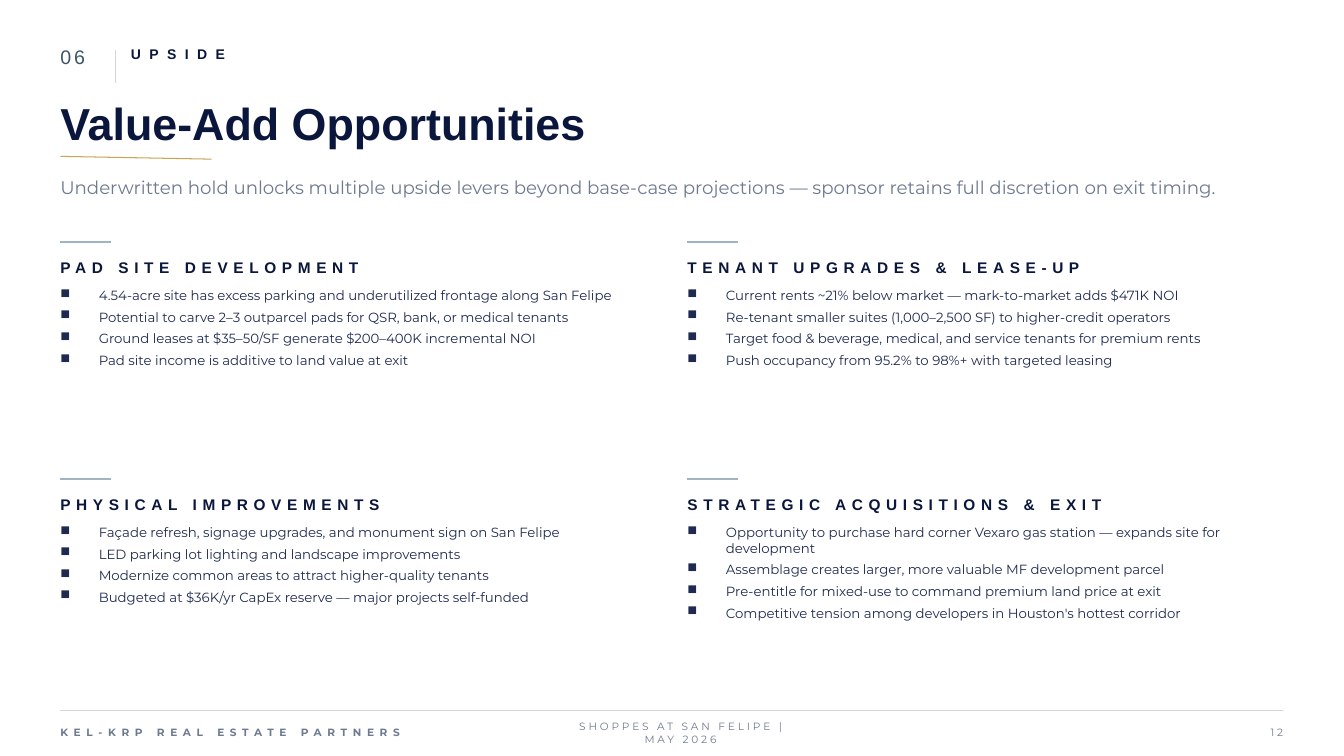
from dataclasses import dataclass
from itertools import product

from lxml.etree import SubElement
from pptx import Presentation
from pptx.dml.color import RGBColor
from pptx.enum.shapes import MSO_CONNECTOR
from pptx.enum.text import MSO_ANCHOR, PP_ALIGN
from pptx.oxml.ns import qn
from pptx.slide import Slide
from pptx.util import Cm, Pt

NAVY = "0B163C"
INK = "1E2A50"
SLATE = "3E5668"
GREY = "6E7A90"
RULE = "D4D6DC"
STEEL = "A0B4C3"
GOLD = "C9A557"

LEFT = 1.52
RIGHT = 32.33
COLUMNS = (LEFT, 17.32)
ROWS = (6.1, 12.07)
WIDTH = 15.04
INDENT = 0.97


@dataclass
class Lever:
    title: str
    points: list[str]


LEVERS = [
    Lever("PAD SITE DEVELOPMENT", [
        "4.54-acre site has excess parking and underutilized frontage along San Felipe",
        "Potential to carve 2–3 outparcel pads for QSR, bank, or medical tenants",
        "Ground leases at $35–50/SF generate $200–400K incremental NOI",
        "Pad site income is additive to land value at exit",
    ]),
    Lever("TENANT UPGRADES & LEASE-UP", [
        "Current rents ~21% below market — mark-to-market adds $471K NOI",
        "Re-tenant smaller suites (1,000–2,500 SF) to higher-credit operators",
        "Target food & beverage, medical, and service tenants for premium rents",
        "Push occupancy from 95.2% to 98%+ with targeted leasing",
    ]),
    Lever("PHYSICAL IMPROVEMENTS", [
        "Façade refresh, signage upgrades, and monument sign on San Felipe",
        "LED parking lot lighting and landscape improvements",
        "Modernize common areas to attract higher-quality tenants",
        "Budgeted at $36K/yr CapEx reserve — major projects self-funded",
    ]),
    Lever("STRATEGIC ACQUISITIONS & EXIT", [
        "Opportunity to purchase hard corner Vexaro gas station — expands site for development",
        "Assemblage creates larger, more valuable MF development parcel",
        "Pre-entitle for mixed-use to command premium land price at exit",
        "Competitive tension among developers in Houston's hottest corridor",
    ]),
]


def color(code: str) -> RGBColor:
    return RGBColor.from_string(code)


def write(slide: Slide, lines: list[str], left: float, top: float, width: float,
          height: float, *, size: float, fill: str = GREY, face: str = "Montserrat",
          bold: bool = False, track: int = 0, align: PP_ALIGN = PP_ALIGN.LEFT,
          anchor: MSO_ANCHOR = MSO_ANCHOR.TOP, bullet: str = "", after: float = 0) -> None:
    frame = slide.shapes.add_textbox(Cm(left), Cm(top), Cm(width), Cm(height)).text_frame
    frame.word_wrap = True
    frame.vertical_anchor = anchor
    frame.margin_left = frame.margin_right = frame.margin_top = frame.margin_bottom = 0
    for index, line in enumerate(lines):
        para = frame.add_paragraph() if index else frame.paragraphs[0]
        para.alignment = align
        para.space_after = Pt(after)
        if bullet:
            props = para._p.get_or_add_pPr()
            props.set("marL", str(Cm(INDENT)))
            props.set("indent", str(-Cm(INDENT)))
            SubElement(props, qn("a:buChar")).set("char", bullet)
        run = para.add_run()
        run.text = line
        run.font.name = face
        run.font.size = Pt(size)
        run.font.bold = bold
        run.font.color.rgb = color(fill)
        if track:
            run._r.get_or_add_rPr().set("spc", str(track * 100))


def rule(slide: Slide, start: tuple[float, float], end: tuple[float, float],
         fill: str, weight: float) -> None:
    line = slide.shapes.add_connector(
        MSO_CONNECTOR.STRAIGHT, *(Cm(value) for value in (*start, *end)))
    line.line.color.rgb = color(fill)
    line.line.width = Pt(weight)
    SubElement(line._element.spPr, qn("a:effectLst"))


def header(slide: Slide) -> None:
    write(slide, ["06"], LEFT, 1.14, 1.78, 1.14, size=14, fill=SLATE, face="Arial", track=2)
    rule(slide, (2.92, 1.27), (2.92, 2.08), RULE, 0.6)
    write(slide, ["UPSIDE"], 3.3, 1.14, 17.78, 1.02, size=10, fill=NAVY,
          face="Arial", bold=True, track=6)
    write(slide, ["Value-Add Opportunities"], LEFT, 2.41, RIGHT - LEFT, 2.16,
          size=32, fill=NAVY, face="Arial", bold=True)
    rule(slide, (LEFT, 3.94), (5.33, 4.01), GOLD, 0.75)
    write(slide, ["Underwritten hold unlocks multiple upside levers beyond base-case "
                  "projections — sponsor retains full discretion on exit timing."],
          LEFT, 4.45, RIGHT - LEFT, 1.02, size=13)


def panel(slide: Slide, lever: Lever, left: float, top: float) -> None:
    rule(slide, (left, top), (left + 1.27, top), STEEL, 1.5)
    write(slide, [lever.title], left, top + 0.25, WIDTH, 0.76, size=11, fill=NAVY,
          face="Arial", bold=True, track=4, anchor=MSO_ANCHOR.MIDDLE)
    write(slide, lever.points, left, top + 1.14, WIDTH, 3.94, size=9.5, fill=INK,
          bullet="■", after=4)


def footer(slide: Slide) -> None:
    top, height = 18.08, 0.76
    rule(slide, (LEFT, 17.91), (RIGHT, 17.91), RULE, 0.5)
    write(slide, ["KEL-KRP REAL ESTATE PARTNERS"], LEFT, top, 12.7, height, size=7.5,
          bold=True, track=4, anchor=MSO_ANCHOR.MIDDLE)
    write(slide, ["SHOPPES AT SAN FELIPE |", "MAY 2026"], 13.97, top, 6.35, height, size=7.5,
          track=2, align=PP_ALIGN.CENTER, anchor=MSO_ANCHOR.MIDDLE)
    write(slide, ["12"], RIGHT - 2.54, top, 2.54, height, size=7.5, track=2,
          align=PP_ALIGN.RIGHT, anchor=MSO_ANCHOR.MIDDLE)


def main() -> None:
    deck = Presentation()
    deck.slide_width = Cm(33.86)
    deck.slide_height = Cm(19.05)
    slide = deck.slides.add_slide(deck.slide_layouts[6])
    header(slide)
    for lever, (top, left) in zip(LEVERS, product(ROWS, COLUMNS)):
        panel(slide, lever, left, top)
    footer(slide)
    deck.save("out.pptx")


if __name__ == "__main__":
    main()
